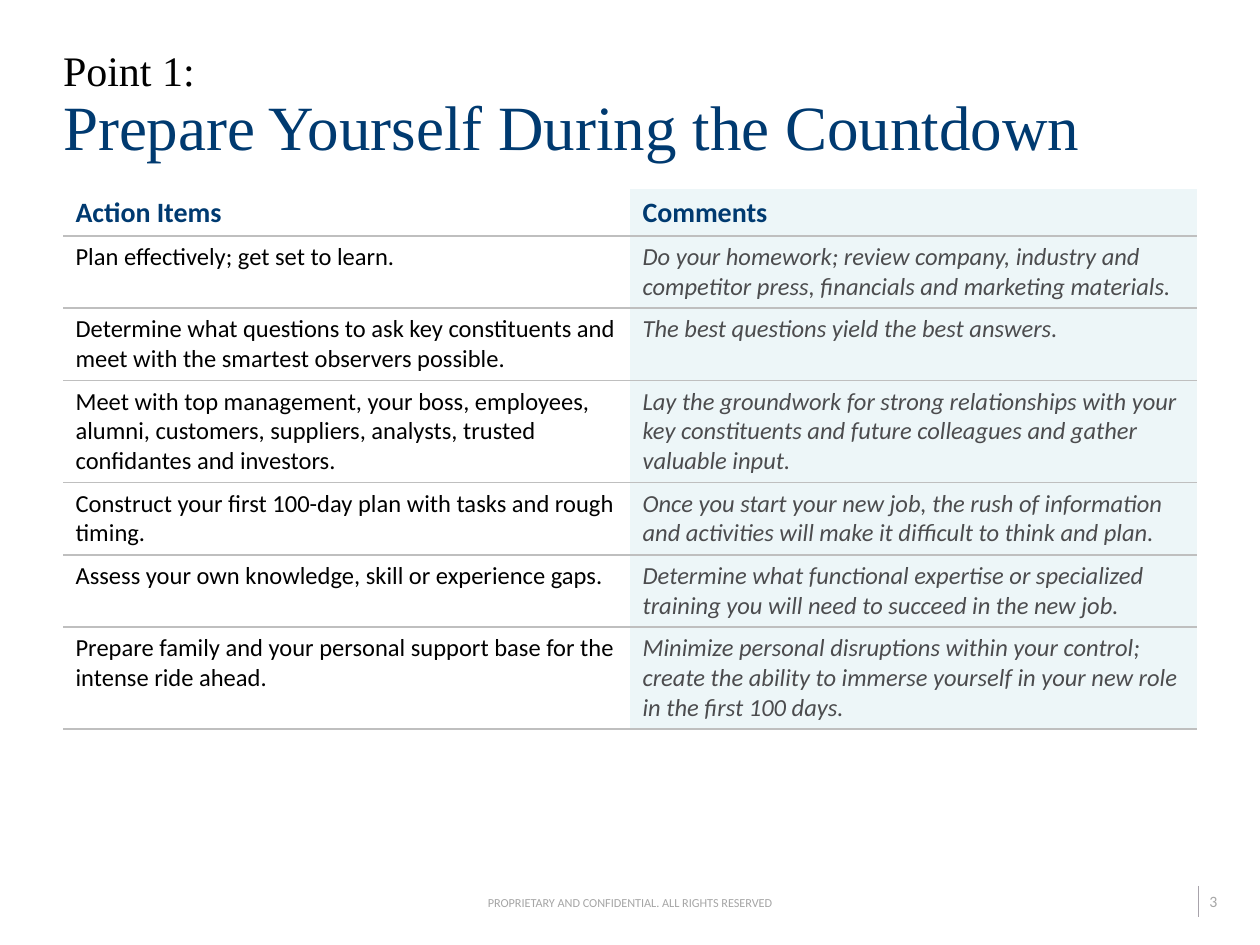
from typing import NamedTuple

import lxml.etree
import pptx
import pptx.dml.color
import pptx.enum.shapes
import pptx.enum.text
import pptx.oxml
import pptx.oxml.ns
import pptx.util

RGBColor = pptx.dml.color.RGBColor
Anchor = pptx.enum.text.MSO_ANCHOR
Align = pptx.enum.text.PP_ALIGN

NAVY = RGBColor(0x00, 0x3A, 0x70)
BLACK = RGBColor(0x00, 0x00, 0x00)
DARK_GRAY = RGBColor(0x4C, 0x4C, 0x4E)
FOOTER_GRAY = RGBColor(0xA6, 0xA6, 0xA6)
RULE_GRAY = RGBColor(0xA8, 0xA3, 0xAB)
BORDER_GRAY = RGBColor(0xBF, 0xBF, 0xBF)
PALE_BLUE = RGBColor(0xED, 0xF6, 0xF8)

SERIF = "Times New Roman"
SANS = "Calibri"
NO_TABLE_STYLE = "{2D5ABB26-0587-4C30-8999-92F81FD0307C}"

WIDTH, HEIGHT = pptx.util.Inches(10), pptx.util.Inches(7.5)
GRID_COLUMNS, GRID_ROWS = 20, 30
MARGIN, CONTENT = 1, 18  # grid columns


class Box(NamedTuple):
    """Position and size in grid columns and rows."""
    column: float
    row: float
    columns: float
    rows: float


class Style(NamedTuple):
    font: str
    size: float
    color: RGBColor
    bold: bool = False
    italic: bool = False


class Action(NamedTuple):
    item: str
    comment: str
    lines: int


PREFIX = Style(SERIF, 24, BLACK)
HEADLINE = Style(SERIF, 36, NAVY)
HEADER = Style(SANS, 16, NAVY, bold=True)
ITEM = Style(SANS, 14, BLACK)
COMMENT = Style(SANS, 14, DARK_GRAY, italic=True)

HEADER_HEIGHT = 0.37
ROW_HEIGHTS = {2: 0.57, 3: 0.81}  # inches, by lines of text

ACTIONS = [
    Action("Plan effectively; get set to learn.",
           "Do your homework; review company, industry and competitor press, "
           "financials and marketing materials.", 2),
    Action("Determine what questions to ask key constituents and meet with "
           "the smartest observers possible.",
           "The best questions yield the best answers.", 2),
    Action("Meet with top management, your boss, employees, alumni, customers, "
           "suppliers, analysts, trusted confidantes and investors.",
           "Lay the groundwork for strong relationships with your key "
           "constituents and future colleagues and gather valuable input.", 3),
    Action("Construct your first 100-day plan with tasks and rough timing.",
           "Once you start your new job, the rush of information and "
           "activities will make it difficult to think and plan.", 2),
    Action("Assess your own knowledge, skill or experience gaps.",
           "Determine what functional expertise or specialized training you "
           "will need to succeed in the new job.", 2),
    Action("Prepare family and your personal support base for the intense "
           "ride ahead.",
           "Minimize personal disruptions within your control; create the "
           "ability to immerse yourself in your new role in the first 100 days.", 3),
]


def x(columns: float) -> int:
    return round(WIDTH * columns / GRID_COLUMNS)


def y(rows: float) -> int:
    return round(HEIGHT * rows / GRID_ROWS)


def place(box: Box) -> tuple[int, int, int, int]:
    return x(box.column), y(box.row), x(box.columns), y(box.rows)


def format_run(r, style: Style) -> None:
    r.font.name = style.font
    r.font.size = pptx.util.Pt(style.size)
    r.font.color.rgb = style.color
    r.font.bold = style.bold
    r.font.italic = style.italic


def set_insets(tf, left: float, vertical: float) -> None:
    tf.margin_left, tf.margin_right = pptx.util.Inches(left), 0
    tf.margin_top = tf.margin_bottom = pptx.util.Inches(vertical)


def add_title(s) -> None:
    sp = s.shapes.title
    sp.left, sp.top, sp.width, sp.height = place(Box(MARGIN, 1, CONTENT, 4.4))
    tf = sp.text_frame
    tf.text = "Point 1: \vPrepare Yourself During the Countdown"
    tf.auto_size = pptx.enum.text.MSO_AUTO_SIZE.NONE
    tf.vertical_anchor = Anchor.BOTTOM
    set_insets(tf, 0, 0.05)
    p = tf.paragraphs[0]
    p.alignment = Align.LEFT
    p.line_spacing = 0.9
    for r, style in zip(p.runs, (PREFIX, HEADLINE)):
        format_run(r, style)


def add_bottom_border(cell) -> None:
    ns = pptx.oxml.ns.nsdecls("a")
    border = pptx.oxml.parse_xml(
        f'<a:lnB {ns} w="{pptx.util.Pt(1)}"><a:solidFill>'
        f'<a:srgbClr val="{BORDER_GRAY}"/></a:solidFill></a:lnB>')
    cell._tc.get_or_add_tcPr().insert(0, border)


def fill_cell(cell, text: str, style: Style, shaded: bool) -> None:
    cell.text_frame.text = text
    format_run(cell.text_frame.paragraphs[0].runs[0], style)
    cell.vertical_anchor = Anchor.MIDDLE if style is HEADER else Anchor.TOP
    if shaded:
        cell.fill.solid()
        cell.fill.fore_color.rgb = PALE_BLUE
    else:
        cell.fill.background()
    add_bottom_border(cell)


def add_action_table(s) -> None:
    heights = [HEADER_HEIGHT] + [ROW_HEIGHTS[a.lines] for a in ACTIONS]
    table = s.shapes.add_table(len(heights), 2, x(MARGIN), y(6), x(CONTENT),
                               pptx.util.Inches(sum(heights))).table
    table.first_row = table.horz_banding = False
    table._tbl.tblPr.find(pptx.oxml.ns.qn("a:tableStyleId")).text = NO_TABLE_STYLE
    for row, height in zip(table.rows, heights):
        row.height = pptx.util.Inches(height)
    rows = [("Action Items", "Comments")] + [(a.item, a.comment) for a in ACTIONS]
    for i, texts in enumerate(rows):
        styles = (ITEM, COMMENT) if i else (HEADER, HEADER)
        for j, (text, style) in enumerate(zip(texts, styles)):
            fill_cell(table.cell(i, j), text, style, shaded=j == 1)


def add_label(s, box: Box, text: str, size: float, align, anchor,
              left: float = 0, vertical: float = 0) -> None:
    tf = s.shapes.add_textbox(*place(box)).text_frame
    tf.text = text
    tf.word_wrap = False
    tf.vertical_anchor = anchor
    set_insets(tf, left, vertical)
    p = tf.paragraphs[0]
    p.alignment = align
    format_run(p.runs[0], Style(SANS, size, FOOTER_GRAY))


def add_footer(s) -> None:
    add_label(s, Box(7.72, 28.4, 4.56, 0.48),
              "PROPRIETARY AND CONFIDENTIAL. ALL RIGHTS RESERVED",
              7, Align.CENTER, Anchor.MIDDLE)
    add_label(s, Box(19, 28.12, 0.8, 1), "3", 9, Align.LEFT, Anchor.TOP, 0.1, 0.05)
    rule = s.shapes.add_connector(pptx.enum.shapes.MSO_CONNECTOR.STRAIGHT,
                                  x(19.02), y(28.12), x(19.02), y(29.12))
    rule.line.color.rgb = RULE_GRAY
    rule.line.width = pptx.util.Pt(0.5)
    lxml.etree.SubElement(rule._element.spPr, pptx.oxml.ns.qn("a:effectLst"))


def main() -> None:
    prs = pptx.Presentation()
    prs.slide_width, prs.slide_height = WIDTH, HEIGHT
    s = prs.slides.add_slide(prs.slide_layouts.get_by_name("Title Only"))
    add_title(s)
    add_action_table(s)
    add_footer(s)
    prs.save("out.pptx")


if __name__ == "__main__":
    main()
